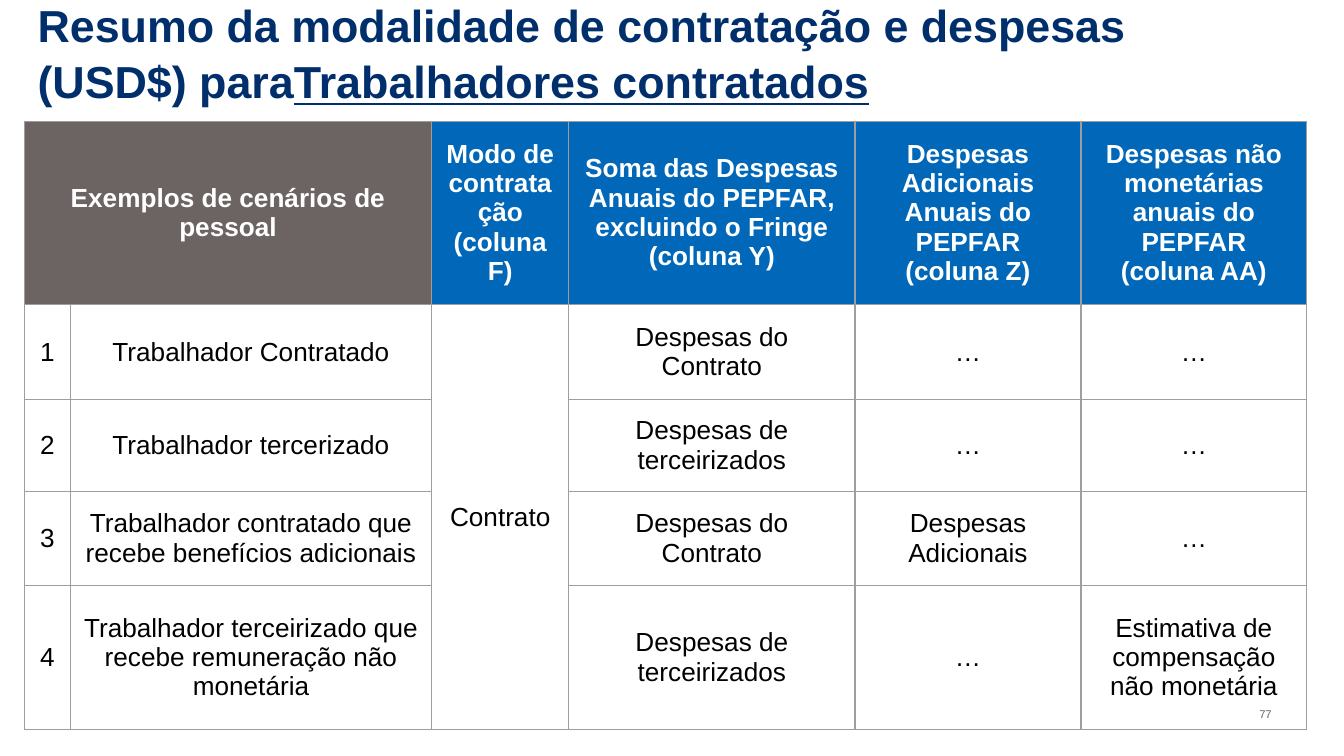
from pptx import Presentation
from pptx.dml.color import RGBColor
from pptx.enum import text
from pptx.oxml import parse_xml
from pptx.oxml.ns import nsdecls
from pptx.util import Cm, Pt

FONT = "Arial"
NAVY, BLUE, GRAY = "002F6C", "0067B9", "6C6463"
WHITE, BLACK, BORDER = "FFFFFF", "000000", "9E9E9E"
PAD = 0.25

TITLE = [
    ("Resumo da modalidade de contratação e despesas (USD$) para", False),
    ("Trabalhadores contratados", True),
]
PAGE = "77"
HEADER = [
    "Exemplos de cenários de pessoal",
    "",
    "Modo de contratação (coluna F)",
    "Soma das Despesas Anuais do PEPFAR, excluindo o Fringe\n(coluna Y)",
    "Despesas Adicionais Anuais do PEPFAR (coluna Z)",
    "Despesas não monetárias anuais do PEPFAR\n(coluna AA)",
]
ROWS = [
    ["1", "Trabalhador Contratado", "Contrato", "Despesas do Contrato", "…", "…"],
    ["2", "Trabalhador tercerizado", "", "Despesas de terceirizados", "…", "…"],
    ["3", "Trabalhador contratado que recebe benefícios adicionais", "",
     "Despesas do Contrato", "Despesas Adicionais", "…"],
    ["4", "Trabalhador terceirizado que recebe remuneração não monetária", "",
     "Despesas de terceirizados", "…", "Estimativa de compensação não monetária"],
]
COL_WIDTHS = [0.87, 6.83, 2.59, 5.41, 4.27, 4.27]
ROW_HEIGHTS = [2.16, 1.8, 1.73, 1.78, 2.72]
MERGES = [((0, 0), (0, 1)), ((1, 2), (4, 2))]


def rgb(value):
    return RGBColor.from_string(value)


def add_run(p, content, size, color, bold=False, underline=None):
    r = p.add_run()
    r.text = content
    r.font.name = FONT
    r.font.size = Pt(size)
    r.font.color.rgb = rgb(color)
    r.font.bold = bold
    r.font.underline = underline


def add_box(s, left, top, width, height, anchor, pad_y):
    tf = s.shapes.add_textbox(Cm(left), Cm(top), Cm(width), Cm(height)).text_frame
    tf.word_wrap = True
    tf.vertical_anchor = anchor
    tf.margin_left = tf.margin_right = Cm(PAD)
    tf.margin_top = tf.margin_bottom = Cm(pad_y)
    return tf.paragraphs[0]


def set_borders(cell):
    tc_pr = cell._tc.get_or_add_tcPr()
    for i, side in enumerate(("lnL", "lnR", "lnT", "lnB")):
        tc_pr.insert(i, parse_xml(
            f'<a:{side} {nsdecls("a")} w="{Pt(0.75)}"><a:solidFill>'
            f'<a:srgbClr val="{BORDER}"/></a:solidFill></a:{side}>'))


def fill_cell(cell, content, fill, color, bold):
    cell.vertical_anchor = text.MSO_ANCHOR.MIDDLE
    cell.margin_left = cell.margin_right = Cm(PAD)
    cell.margin_top = cell.margin_bottom = Cm(PAD)
    if fill:
        cell.fill.solid()
        cell.fill.fore_color.rgb = rgb(fill)
    else:
        cell.fill.background()
    set_borders(cell)
    if not content:
        return
    tf = cell.text_frame
    for i, line in enumerate(content.split("\n")):
        p = tf.add_paragraph() if i else tf.paragraphs[0]
        p.alignment = text.PP_ALIGN.CENTER
        add_run(p, line, 14, color, bold)


def add_staff_table(s):
    data = [HEADER] + ROWS
    table = s.shapes.add_table(
        len(data), len(HEADER), Cm(0.46), Cm(2.29),
        Cm(sum(COL_WIDTHS)), Cm(sum(ROW_HEIGHTS))).table
    table.horz_banding = False
    for col, width in zip(table.columns, COL_WIDTHS):
        col.width = Cm(width)
    for row, height in zip(table.rows, ROW_HEIGHTS):
        row.height = Cm(height)
    for start, end in MERGES:
        table.cell(*start).merge(table.cell(*end))
    for i, row in enumerate(data):
        for j, content in enumerate(row):
            head = i == 0
            fill = (GRAY if j < 2 else BLUE) if head else None
            fill_cell(table.cell(i, j), content, fill, WHITE if head else BLACK, head)


def main():
    prs = Presentation()
    prs.slide_width, prs.slide_height = Cm(25.4), Cm(14.29)
    s = prs.slides.add_slide(prs.slide_layouts[6])

    p = add_box(s, 0.46, 0.51, 23.67, 1.78, text.MSO_ANCHOR.BOTTOM, PAD)
    p.line_spacing = 1.05
    for content, underline in TITLE:
        add_run(p, content, 24, NAVY, True, underline)

    p = add_box(s, 23.55, 12.95, 1.52, 1.09, text.MSO_ANCHOR.MIDDLE, 0.13)
    add_run(p, PAGE, 6, GRAY)

    add_staff_table(s)
    prs.save("out.pptx")


if __name__ == "__main__":
    main()
